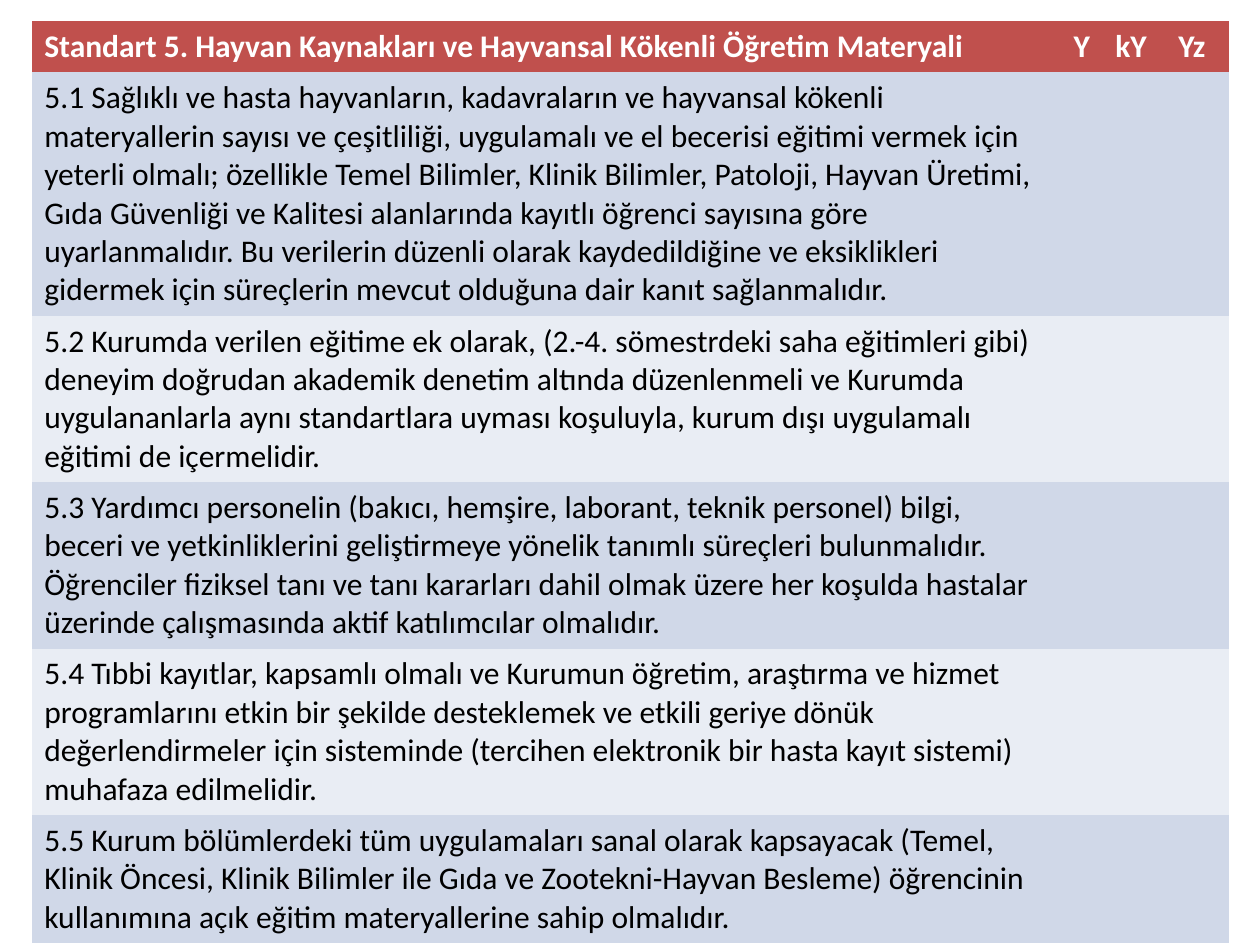
from pptx import Presentation
from pptx import util as u
from pptx.dml import color
from pptx.oxml import ns

COLORS = {
    "header": "C0504D",
    "odd_row": "D0D8E8",
    "even_row": "E9EDF4",
    "header_text": "FFFFFF",
    "body_text": "000000",
}
NO_STYLE_NO_GRID = "{2D5ABB26-0587-4C30-8999-92F81FD0307C}"
COLUMN_WIDTHS = [20.75, 0.84, 1.27, 1.27]
ROW_HEIGHT = 1.03

HEADER = [
    "Standart 5. Hayvan Kaynakları ve Hayvansal Kökenli Öğretim Materyali",
    "Y", "kY", "Yz",
]
STANDARDS = [
    "5.1 Sağlıklı ve hasta hayvanların, kadavraların ve hayvansal kökenli "
    "materyallerin sayısı ve çeşitliliği, uygulamalı ve el becerisi eğitimi "
    "vermek için yeterli olmalı; özellikle Temel Bilimler, Klinik Bilimler, "
    "Patoloji, Hayvan Üretimi, Gıda Güvenliği ve Kalitesi alanlarında kayıtlı "
    "öğrenci sayısına göre uyarlanmalıdır. Bu verilerin düzenli olarak "
    "kaydedildiğine ve eksiklikleri gidermek için süreçlerin mevcut olduğuna "
    "dair kanıt sağlanmalıdır.",
    "5.2 Kurumda verilen eğitime ek olarak, (2.-4. sömestrdeki saha eğitimleri "
    "gibi) deneyim doğrudan akademik denetim altında düzenlenmeli ve Kurumda "
    "uygulananlarla aynı standartlara uyması koşuluyla, kurum dışı uygulamalı "
    "eğitimi de içermelidir.",
    "5.3 Yardımcı personelin (bakıcı, hemşire, laborant, teknik personel) "
    "bilgi, beceri ve yetkinliklerini geliştirmeye yönelik tanımlı süreçleri "
    "bulunmalıdır. Öğrenciler fiziksel tanı ve tanı kararları dahil olmak üzere "
    "her koşulda hastalar üzerinde çalışmasında aktif katılımcılar olmalıdır.",
    "5.4 Tıbbi kayıtlar, kapsamlı olmalı ve Kurumun öğretim, araştırma ve "
    "hizmet programlarını etkin bir şekilde desteklemek ve etkili geriye dönük "
    "değerlendirmeler için sisteminde (tercihen elektronik bir hasta kayıt "
    "sistemi) muhafaza edilmelidir.",
    "5.5 Kurum bölümlerdeki tüm uygulamaları sanal olarak kapsayacak (Temel, "
    "Klinik Öncesi, Klinik Bilimler ile Gıda ve Zootekni-Hayvan Besleme) "
    "öğrencinin kullanımına açık eğitim materyallerine sahip olmalıdır.",
]


def rgb(name):
    return color.RGBColor.from_string(COLORS[name])


def fill_row(row, texts, fill, text_color, bold):
    for cell, content in zip(row.cells, texts):
        cell.fill.solid()
        cell.fill.fore_color.rgb = rgb(fill)
        cell.text = content
        font = cell.text_frame.paragraphs[0].font
        font.name = "Calibri"
        font.size = u.Pt(18)
        font.bold = bold
        font.color.rgb = rgb(text_color)


def add_standards_table(slide):
    frame = slide.shapes.add_table(
        len(STANDARDS) + 1, len(COLUMN_WIDTHS),
        u.Cm(0.64), u.Cm(0.43), u.Cm(sum(COLUMN_WIDTHS)), u.Cm(18.31))
    table = frame.table
    style = frame._element.find(".//" + ns.qn("a:tableStyleId"))
    style.text = NO_STYLE_NO_GRID

    for column, width in zip(table.columns, COLUMN_WIDTHS):
        column.width = u.Cm(width)
    for row in table.rows:
        row.height = u.Cm(ROW_HEIGHT)  # rows grow to fit their text

    fill_row(table.rows[0], HEADER, "header", "header_text", True)
    for number, standard in enumerate(STANDARDS, start=1):
        fill = "odd_row" if number % 2 else "even_row"
        fill_row(table.rows[number], [standard, "", "", ""],
                 fill, "body_text", False)


def main():
    presentation = Presentation()
    presentation.slide_width = u.Cm(25.4)
    presentation.slide_height = u.Cm(19.05)
    slide = presentation.slides.add_slide(presentation.slide_layouts[6])
    add_standards_table(slide)
    presentation.save("out.pptx")


if __name__ == "__main__":
    main()
